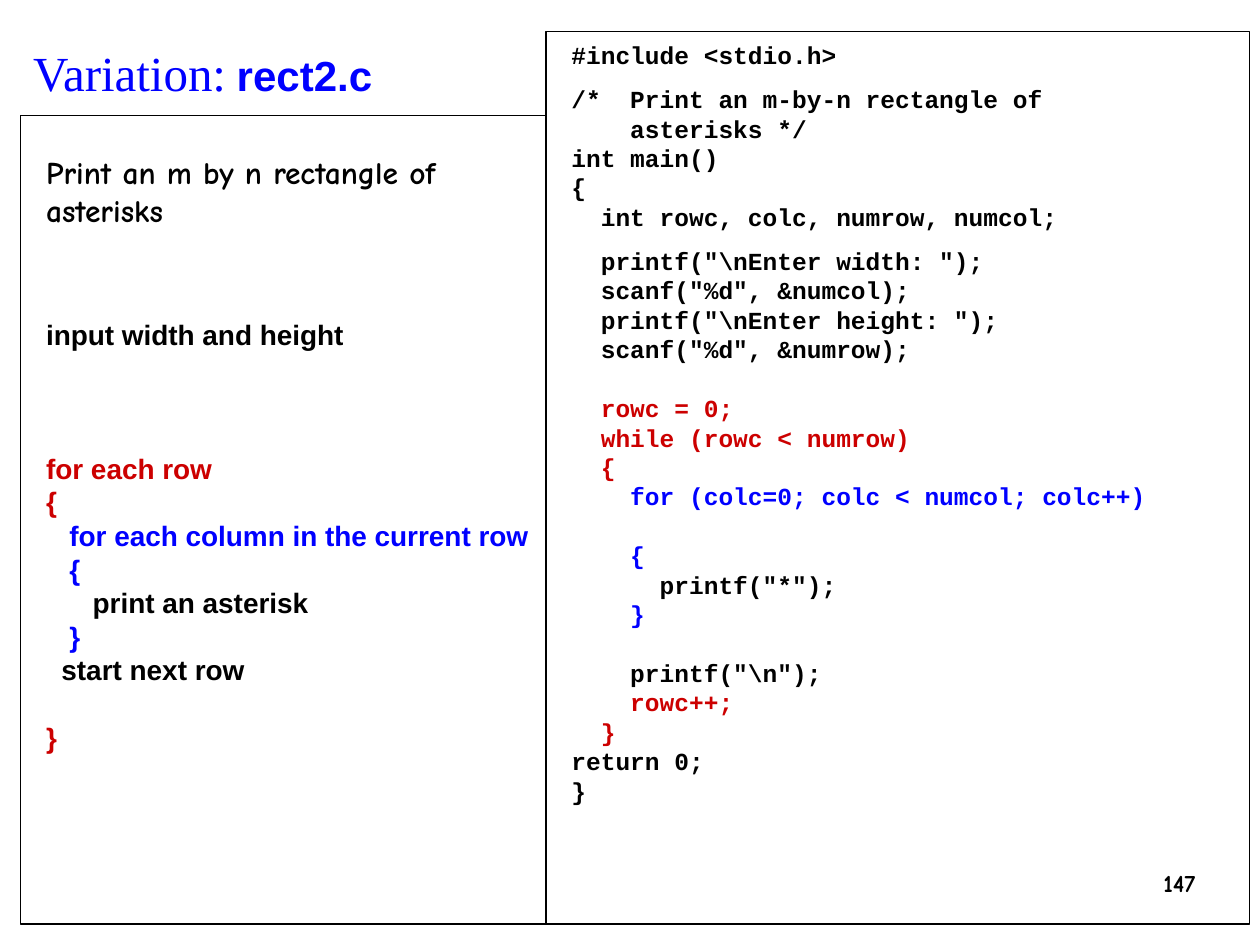
from pptx import Presentation
from pptx.dml.color import RGBColor
from pptx.enum.shapes import MSO_SHAPE as Shape
from pptx.enum.text import MSO_ANCHOR as Anchor, MSO_AUTO_SIZE as AutoSize, PP_ALIGN as Align
from pptx.util import Cm, Pt

COLORS = {"text": "000000", "outer": "CC0000", "inner": "0000FF", "title": "0000FF"}
LEADING = 1.2
INSET = 0.13

# Each line: text, colour, space before in points
CODE = [
    ('#include <stdio.h>', "text", 0),
    ('/*  Print an m-by-n rectangle of', "text", 8.4),
    ('    asterisks */', "text", 0),
    ('int main()', "text", 0),
    ('{', "text", 0),
    ('  int rowc, colc, numrow, numcol;', "text", 0),
    ('  printf("\\nEnter width: ");', "text", 8.4),
    ('  scanf("%d", &numcol);', "text", 0),
    ('  printf("\\nEnter height: ");', "text", 0),
    ('  scanf("%d", &numrow);', "text", 0),
    ('  rowc = 0;', "outer", 16.8),
    ('  while (rowc < numrow)', "outer", 0),
    ('  {', "outer", 0),
    ('    for (colc=0; colc < numcol; colc++)', "inner", 0),
    ('    {', "inner", 16.8),
    ('      printf("*");', "text", 0),
    ('    }', "inner", 0),
    ('    printf("\\n");', "text", 16.8),
    ('    rowc++;', "outer", 0),
    ('  }', "outer", 0),
    ('return 0;', "text", 0),
    ('}', "text", 0),
]

TASK = ["Print an m by n rectangle of", "asterisks"]

# Each step: text, colour, space before in points, indent in cm
STEPS = [
    ("input width and height", "text", 50.4, 0),
    ("for each row", "outer", 57.6, 0),
    ("{", "outer", 0, 0),
    ("for each column in the current row", "inner", 0, 0.47),
    ("{", "inner", 0, 0.47),
    ("print an asterisk", "text", 0, 0.94),
    ("}", "inner", 0, 0.47),
    ("start next row", "text", 0, 0.31),
    ("}", "outer", 19.2, 0),
]


def add_run(paragraph, text, font_name, size, color, bold=True, italic=False):
    run = paragraph.add_run()
    run.text = text
    font = run.font
    font.name, font.size, font.bold, font.italic = font_name, Pt(size), bold, italic
    font.color.rgb = RGBColor.from_string(COLORS[color])


def set_frame(frame, left=0.25, top=INSET):
    frame.word_wrap = True
    frame.auto_size = AutoSize.NONE
    frame.vertical_anchor = Anchor.TOP
    frame.margin_left, frame.margin_top = Cm(left), Cm(top)
    frame.margin_right, frame.margin_bottom = Cm(0.25), Cm(INSET)


def add_line(frame, text, font_name, size, color, before=0, indent=0):
    """Append one left-aligned line, reusing the frame's first empty paragraph."""
    first = frame.paragraphs[0]
    paragraph = frame.add_paragraph() if first.runs else first
    properties = paragraph._p.get_or_add_pPr()
    properties.set("marL", str(Cm(indent)))
    properties.set("indent", "0")
    paragraph.alignment = Align.LEFT
    paragraph.line_spacing = Pt(size * LEADING)
    paragraph.space_before = Pt(before)
    add_run(paragraph, text, font_name, size, color)


def add_panel(slide, box, top_inset):
    """Add an outlined, unfilled rectangle and return its text frame."""
    panel = slide.shapes.add_shape(Shape.RECTANGLE, *map(Cm, box))
    panel.shadow.inherit = False
    panel.fill.background()
    panel.line.color.rgb = RGBColor.from_string(COLORS["text"])
    panel.line.width = Pt(0.75)
    set_frame(panel.text_frame, 0.51, top_inset)
    return panel.text_frame


def place_title(slide, box):
    title = slide.shapes.title
    title.left, title.top, title.width, title.height = map(Cm, box)
    set_frame(title.text_frame, top=0.21)
    paragraph = title.text_frame.paragraphs[0]
    paragraph.alignment = Align.LEFT
    paragraph.space_before = Pt(0)
    add_run(paragraph, "Variation:", "Times New Roman", 28, "title", bold=False)
    add_run(paragraph, " ", "Times New Roman", 24, "title", bold=False, italic=True)
    add_run(paragraph, "rect2.c", "Arial", 24, "title")


def place_page_number(slide, box):
    frame = slide.shapes.add_textbox(*map(Cm, box)).text_frame
    set_frame(frame)
    frame.paragraphs[0].alignment = Align.RIGHT
    add_run(frame.paragraphs[0], "147", "Comic Neue", 14, "text")


def place_code(slide, box):
    frame = add_panel(slide, box, 0.17)
    for text, color, before in CODE:
        add_line(frame, text, "Courier New", 14, color, before)


def place_pseudocode(slide, box):
    frame = add_panel(slide, box, 0.76)
    for text in TASK:
        add_line(frame, text, "Comic Neue", 18, "text")
    for text, color, before, indent in STEPS:
        add_line(frame, text, "Arial", 16, color, before, indent)


def main():
    deck = Presentation()
    deck.slide_width, deck.slide_height = Cm(25.4), Cm(19.05)
    slide = deck.slides.add_slide(deck.slide_layouts[5])
    left, top, middle, right, bottom = 0.42, 0.64, 11.01, 25.19, 18.63
    panel_top = 2.33
    place_title(slide, (left, top, 8.26, 1.46))
    place_page_number(slide, (21.17, 17.36, 3.18, 1.27))
    place_code(slide, (middle, top, right - middle, bottom - top))
    place_pseudocode(slide, (left, panel_top, middle - left, bottom - panel_top))
    deck.save("out.pptx")


if __name__ == "__main__":
    main()
